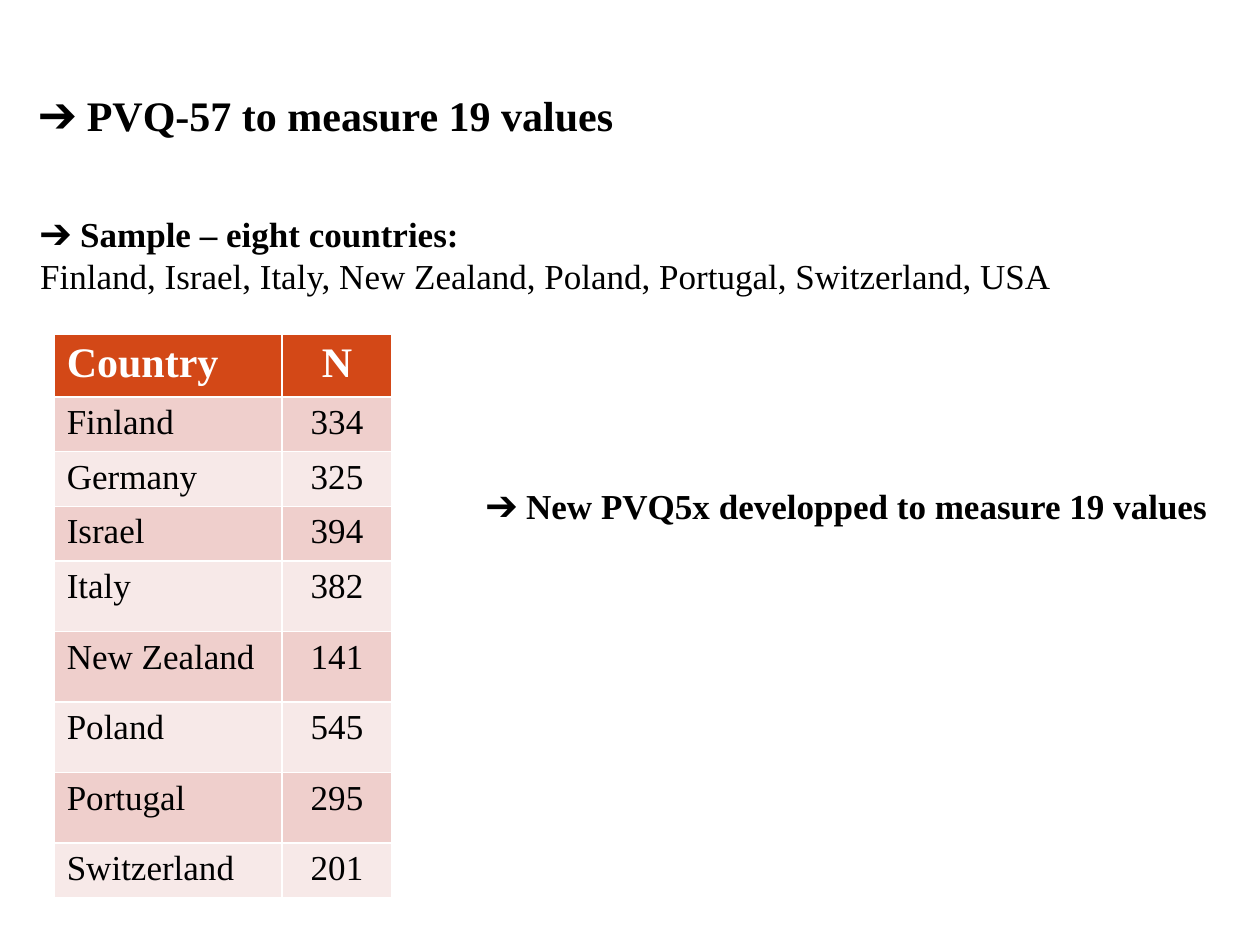
"""Build a slide on the PVQ-57 value survey and its sample by country."""
from pptx import Presentation
from pptx.dml.color import RGBColor
from pptx.enum.text import MSO_ANCHOR, MSO_AUTO_SIZE, PP_ALIGN
from pptx.util import Inches, Pt

FONT = "Times New Roman"
BLACK, WHITE = "000000", "FFFFFF"
HEADER_FILL = "D34817"
BAND_FILLS = ["EFCFCC", "F7E9E8"]

STATEMENTS = [
    ((3.76, 3.8, 5.97, 0.44), MSO_ANCHOR.TOP,
     [("➔ New PVQ5x developped to measure 19 values", 20, True)]),
    ((0.22, 1.64, 9.13, 0.77), MSO_ANCHOR.TOP,
     [("➔ Sample – eight countries:", 20, True),
      ("Finland, Israel, Italy, New Zealand, Poland, Portugal, Switzerland, USA",
       20, False)]),
    ((0.21, 0.66, 5.4, 0.5), MSO_ANCHOR.MIDDLE,
     [("➔ PVQ-57 to measure 19 values", 24, True)]),
]

SAMPLE = [
    ("Country", "N"),
    ("Finland", "334"),
    ("Germany", "325"),
    ("Israel", "394"),
    ("Italy", "382"),
    ("New Zealand", "141"),
    ("Poland", "545"),
    ("Portugal", "295"),
    ("Switzerland", "201"),
]
TABLE_LEFT, TABLE_TOP = 0.43, 2.65
COLUMN_WIDTHS = [1.81, 0.87]
ROW_HEIGHTS = [0.49] + [0.43] * 3 + [0.56] * 4 + [0.43]


def rgb(code):
    return RGBColor.from_string(code)


def write(paragraph, wording, size, bold, color):
    paragraph.text = wording
    for run in paragraph.runs:
        run.font.name = FONT
        run.font.size = Pt(size)
        run.font.bold = bold
        run.font.color.rgb = rgb(color)


def add_statement(slide, place, anchor, lines):
    frame = slide.shapes.add_textbox(*map(Inches, place)).text_frame
    frame.word_wrap = True
    frame.auto_size = MSO_AUTO_SIZE.SHAPE_TO_FIT_TEXT
    frame.vertical_anchor = anchor
    for index, (wording, size, bold) in enumerate(lines):
        paragraph = frame.add_paragraph() if index else frame.paragraphs[0]
        write(paragraph, wording, size, bold, BLACK)


def add_sample_table(slide):
    sample = slide.shapes.add_table(
        len(SAMPLE), len(COLUMN_WIDTHS), Inches(TABLE_LEFT), Inches(TABLE_TOP),
        Inches(sum(COLUMN_WIDTHS)), Inches(sum(ROW_HEIGHTS))).table
    for column, width in zip(sample.columns, COLUMN_WIDTHS):
        column.width = Inches(width)
    for r, (entries, height) in enumerate(zip(SAMPLE, ROW_HEIGHTS)):
        sample.rows[r].height = Inches(height)
        header = r == 0
        fill = HEADER_FILL if header else BAND_FILLS[(r - 1) % 2]
        for c, entry in enumerate(entries):
            cell = sample.cell(r, c)
            cell.fill.solid()
            cell.fill.fore_color.rgb = rgb(fill)
            paragraph = cell.text_frame.paragraphs[0]
            write(paragraph, entry, 24 if header else 20, header,
                  WHITE if header else BLACK)
            paragraph.alignment = PP_ALIGN.CENTER if c else PP_ALIGN.LEFT


def main():
    deck = Presentation()
    deck.slide_width, deck.slide_height = Inches(10), Inches(7.5)
    slide = deck.slides.add_slide(deck.slide_layouts[6])
    for place, anchor, lines in STATEMENTS:
        add_statement(slide, place, anchor, lines)
    add_sample_table(slide)
    deck.save("out.pptx")


if __name__ == "__main__":
    main()
